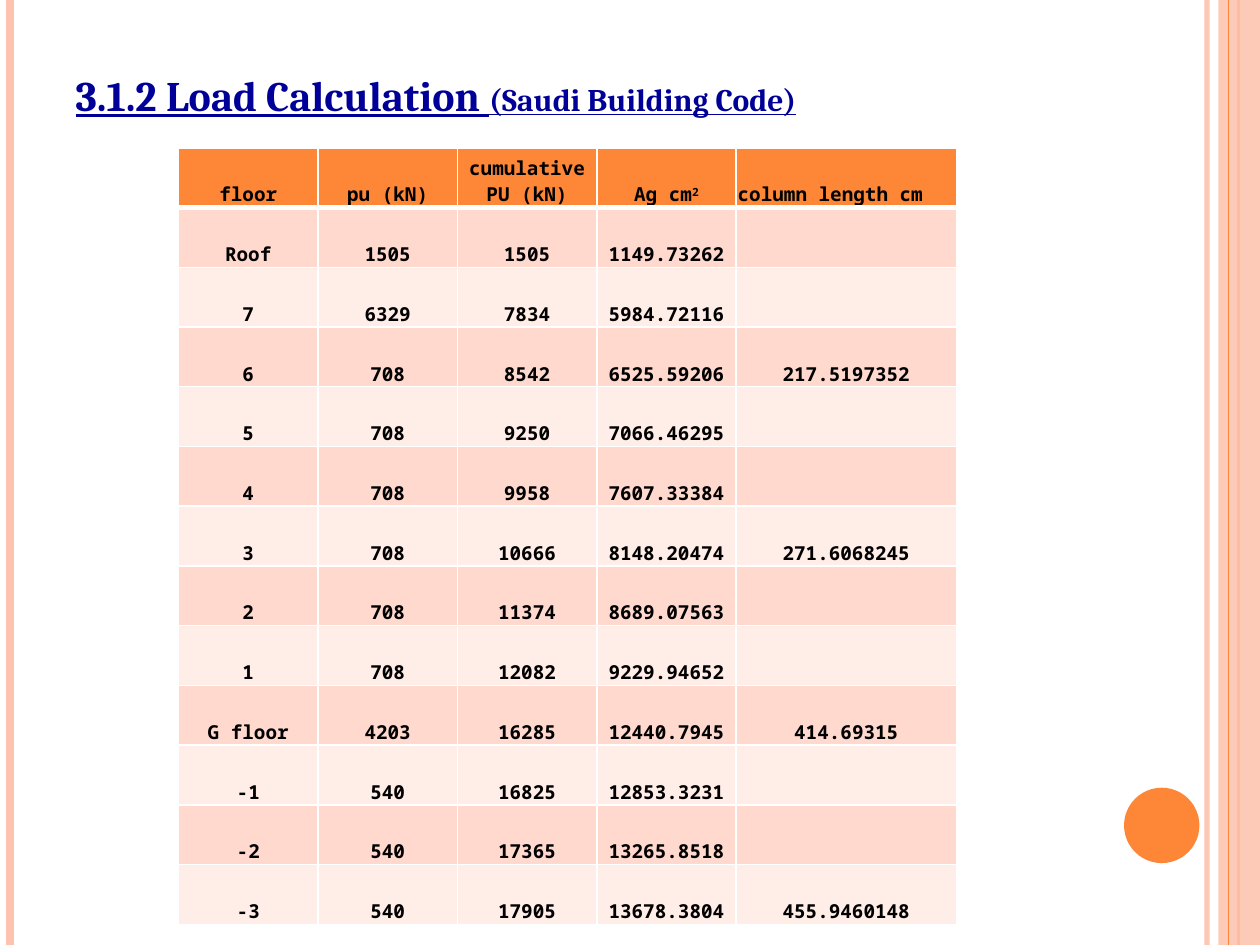
from dataclasses import dataclass

from pptx import Presentation
from pptx.dml.color import RGBColor
from pptx.enum import shapes, text
from pptx.oxml import ns, xmlchemy
from pptx.util import Cm, Pt


@dataclass(frozen=True)
class Theme:
    orange: str = "FE8637"
    peach: str = "FEC3AE"
    navy: str = "000099"
    ink: str = "000000"
    grid: str = "FFFFFF"
    bands: tuple = ("FFD9CE", "FFEDE8")
    heading_font: str = "Cambria"
    table_font: str = "Noto Sans Mono"
    heading_size: int = 24
    subheading_size: int = 18
    table_size: int = 11


THEME = Theme()
SLIDE_WIDTH, SLIDE_HEIGHT = 25.4, 19.05

# Centre (cm), width (pt), colour, opacity (%)
RAILS_BEHIND_BAND = [(24.33, 3, THEME.peach, 93), (0.2, 4.5, THEME.peach, 100),
                     (24.97, 1.5, THEME.orange, 100)]
RAIL_ON_BAND = (24.77, 0.75, THEME.orange, 100)

COLUMN_WIDTHS = [2.81] * 4 + [4.44]
TABLE_LEFT, TABLE_TOP, TABLE_HEIGHT = 3.6, 2.98, 15.66
HEADER = ["floor", "pu (kN)", "cumulative PU (kN)", "Ag cm²", "column length cm"]
FLOORS = [
    ("Roof", "1505", "1505", "1149.73262", ""),
    ("7", "6329", "7834", "5984.72116", ""),
    ("6", "708", "8542", "6525.59206", "217.5197352"),
    ("5", "708", "9250", "7066.46295", ""),
    ("4", "708", "9958", "7607.33384", ""),
    ("3", "708", "10666", "8148.20474", "271.6068245"),
    ("2", "708", "11374", "8689.07563", ""),
    ("1", "708", "12082", "9229.94652", ""),
    ("G floor", "4203", "16285", "12440.7945", "414.69315"),
    ("-1", "540", "16825", "12853.3231", ""),
    ("-2", "540", "17365", "13265.8518", ""),
    ("-3", "540", "17905", "13678.3804", "455.9460148"),
]


def add_child(parent, tag, **attributes):
    child = xmlchemy.OxmlElement(tag)
    for name, value in attributes.items():
        child.set(name, str(value))
    parent.append(child)
    return child


def set_opacity(shape, percent):
    if percent < 100:
        for color in shape.element.spPr.iter(ns.qn("a:srgbClr")):
            add_child(color, "a:alpha", val=percent * 1000)


def add_rail(slide, center, width, color, opacity):
    """Draw a vertical line over the full slide height."""
    rail = slide.shapes.add_connector(
        shapes.MSO_CONNECTOR.STRAIGHT, Cm(center), 0, Cm(center), Cm(SLIDE_HEIGHT))
    rail.line.width = Pt(width)
    rail.line.color.rgb = RGBColor.from_string(color)
    set_opacity(rail, opacity)
    add_child(rail.element.spPr, "a:effectLst")


def add_plain_shape(slide, kind, left, top, width, height, color, opacity=100):
    shape = slide.shapes.add_shape(kind, Cm(left), Cm(top), Cm(width), Cm(height))
    shape.shadow.inherit = False
    shape.fill.solid()
    shape.fill.fore_color.rgb = RGBColor.from_string(color)
    shape.line.fill.background()
    set_opacity(shape, opacity)


def add_run(paragraph, wording, font_name, size, color, underline=None):
    run = paragraph.add_run()
    run.text = wording
    run.font.name = font_name
    run.font.size = Pt(size)
    run.font.bold = True
    run.font.underline = underline
    run.font.color.rgb = RGBColor.from_string(color)
    return run


def write_heading(slide):
    heading = slide.shapes.title
    heading.left, heading.top = Cm(1.27), Cm(1.27)
    heading.width, heading.height = Cm(20.75), Cm(16.72)
    frame = heading.text_frame
    frame.word_wrap = True
    frame.auto_size = text.MSO_AUTO_SIZE.NONE
    frame.vertical_anchor = text.MSO_ANCHOR.TOP
    line = frame.paragraphs[0]
    line.alignment = text.PP_ALIGN.LEFT
    for wording, size in [("3.1.2 Load Calculation ", THEME.heading_size),
                          ("(Saudi Building Code)", THEME.subheading_size)]:
        add_run(line, wording, THEME.heading_font, size, THEME.navy, underline=True)


def set_borders(cell, top, bottom):
    """Rule all four sides; top and bottom are widths in points."""
    properties = cell._tc.get_or_add_tcPr()
    for side, width in [("L", 1), ("R", 1), ("T", top), ("B", bottom)]:
        border = add_child(properties, f"a:ln{side}", w=Pt(width))
        add_child(add_child(border, "a:solidFill"), "a:srgbClr", val=THEME.grid)


def fill_cell(cell, wording, color, alignment, top=1, bottom=1):
    set_borders(cell, top, bottom)
    cell.fill.solid()
    cell.fill.fore_color.rgb = RGBColor.from_string(color)
    cell.vertical_anchor = text.MSO_ANCHOR.BOTTOM
    cell.margin_left = cell.margin_right = cell.margin_top = Cm(0.03)
    cell.margin_bottom = 0
    paragraph = cell.text_frame.paragraphs[0]
    paragraph.alignment = alignment
    style = THEME.table_font, THEME.table_size, THEME.ink
    base = wording.removesuffix("²")
    if base:
        add_run(paragraph, base, *style)
    if base != wording:
        exponent = add_run(paragraph, "2", *style)
        exponent.font._element.set("baseline", "30000")


def add_load_table(slide):
    rows = [HEADER, *FLOORS]
    table = slide.shapes.add_table(
        len(rows), len(HEADER), Cm(TABLE_LEFT), Cm(TABLE_TOP),
        Cm(sum(COLUMN_WIDTHS)), Cm(TABLE_HEIGHT)).table
    table.horz_banding = False
    for column, width in zip(table.columns, COLUMN_WIDTHS):
        column.width = Cm(width)
    for r, row in enumerate(rows):
        table.rows[r].height = Cm(TABLE_HEIGHT / len(rows))
        color = THEME.bands[(r - 1) % 2] if r else THEME.orange
        for c, wording in enumerate(row):
            left_aligned = r == 0 and c == len(HEADER) - 1
            fill_cell(table.cell(r, c), wording, color,
                      text.PP_ALIGN.LEFT if left_aligned else text.PP_ALIGN.CENTER,
                      top=3 if r == 1 else 1, bottom=3 if r == 0 else 1)


def main():
    deck = Presentation()
    deck.slide_width, deck.slide_height = Cm(SLIDE_WIDTH), Cm(SLIDE_HEIGHT)
    slide = deck.slides.add_slide(deck.slide_layouts.get_by_name("Title Only"))
    for rail in RAILS_BEHIND_BAND:
        add_rail(slide, *rail)
    add_plain_shape(slide, shapes.MSO_SHAPE.RECTANGLE,
                    24.56, 0, 0.84, SLIDE_HEIGHT, THEME.peach, opacity=87)
    add_rail(slide, *RAIL_ON_BAND)
    add_plain_shape(slide, shapes.MSO_SHAPE.OVAL, 22.66, 15.88, 1.52, 1.52, THEME.orange)
    write_heading(slide)
    add_load_table(slide)
    deck.save("out.pptx")


if __name__ == "__main__":
    main()
